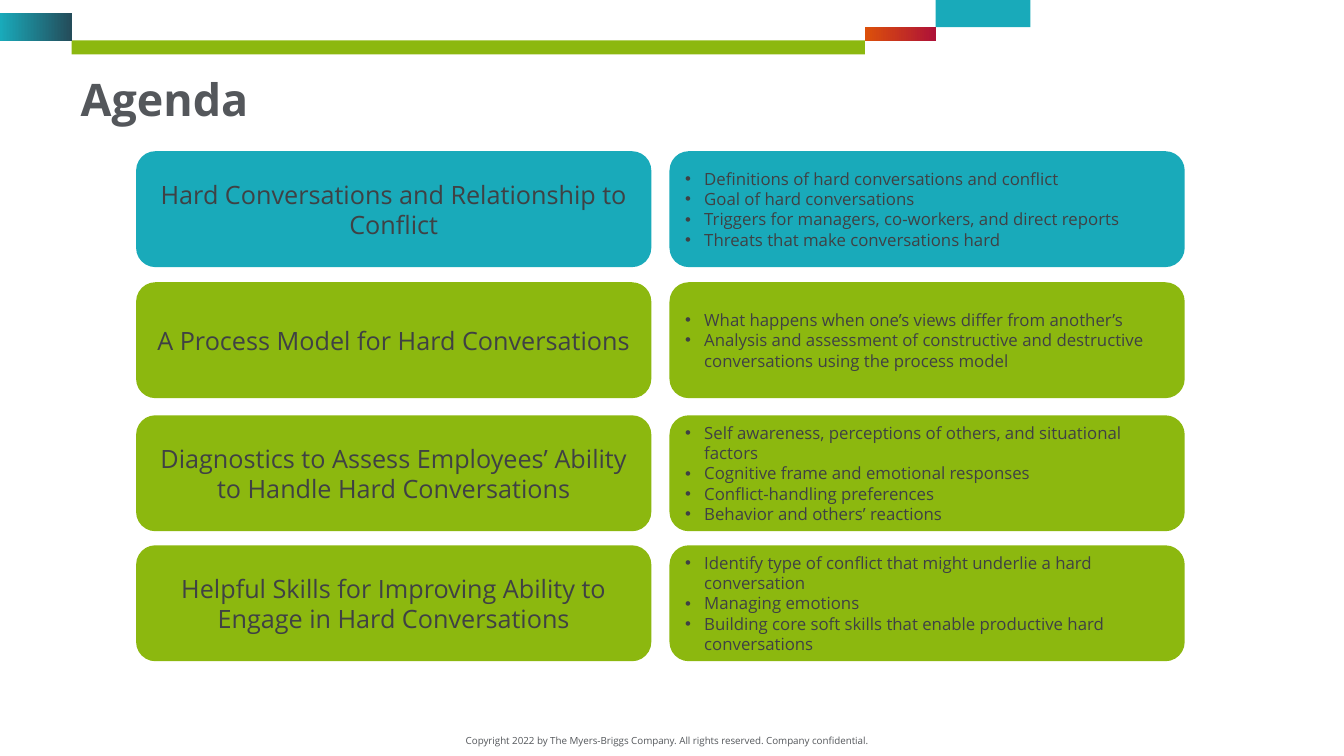
from lxml import etree
from pptx import Presentation
from pptx import util as u
from pptx.dml.color import RGBColor
from pptx.enum import shapes, text
from pptx.oxml.ns import qn

PX = 9144  # EMU, a hundredth of an inch
TEAL, GREEN, GREY, INK = "19AABA", "8CB80F", "54575B", "3F4144"

AGENDA = [
    (150, TEAL, "Hard Conversations and Relationship to Conflict", [
        "Definitions of hard conversations and conflict",
        "Goal of hard conversations",
        "Triggers for managers, co-workers, and direct reports",
        "Threats that make conversations hard"]),
    (280, GREEN, "A Process Model for Hard Conversations", [
        "What happens when one’s views differ from another’s",
        "Analysis and assessment of constructive and destructive "
        "conversations using the process model"]),
    (412, GREEN, "Diagnostics to Assess Employees’ Ability to Handle Hard Conversations", [
        "Self awareness, perceptions of others, and situational factors",
        "Cognitive frame and emotional responses",
        "Conflict-handling preferences",
        "Behavior and others’ reactions"]),
    (541, GREEN, "Helpful Skills for Improving Ability to Engage in Hard Conversations", [
        "Identify type of conflict that might underlie a hard conversation",
        "Managing emotions",
        "Building core soft skills that enable productive hard conversations"]),
]


def colour(value):
    return RGBColor.from_string(value)


class Page:
    font = "Open Sans"

    def __init__(self, deck):
        self.slide = deck.slides.add_slide(deck.slide_layouts[5])

    def style(self, para, size, ink, align=text.PP_ALIGN.LEFT, bold=False):
        para.alignment = align
        para.font.name = self.font
        para.font.size = u.Pt(size)
        para.font.bold = bold
        para.font.color.rgb = colour(ink)

    def title(self, words, left, top, width, height):
        box = self.slide.shapes.title
        box.left, box.top, box.width, box.height = (
            n * PX for n in (left, top, width, height))
        frame = box.text_frame
        frame.text = words
        frame.vertical_anchor = text.MSO_ANCHOR.TOP
        frame.auto_size = text.MSO_AUTO_SIZE.NONE
        para = frame.paragraphs[0]
        para.line_spacing = 0.9
        self.style(para, 32, GREY, bold=True)

    def block(self, kind, fills, *place):
        """Draw a borderless shape; two fills make a left-to-right gradient."""
        box = self.slide.shapes.add_shape(kind, *(n * PX for n in place))
        box.shadow.inherit = False
        box.line.fill.background()
        if len(fills) == 1:
            box.fill.solid()
            box.fill.fore_color.rgb = colour(fills[0])
        else:
            box.fill.gradient()
            box.fill.gradient_angle = 0
            for stop, fill in zip(box.fill.gradient_stops, fills):
                stop.color.rgb = colour(fill)
        return box

    def bar(self, fills, *place):
        self.block(shapes.MSO_SHAPE.RECTANGLE, fills, *place)

    def card(self, fill, lines, size, bulleted, *place):
        box = self.block(shapes.MSO_SHAPE.ROUNDED_RECTANGLE, [fill], *place)
        frame = box.text_frame
        frame.word_wrap = True
        frame.vertical_anchor = text.MSO_ANCHOR.MIDDLE
        frame.text = "\n".join(lines)
        for para in frame.paragraphs:
            if bulleted:
                self.bullet(para)
            align = text.PP_ALIGN.LEFT if bulleted else text.PP_ALIGN.CENTER
            self.style(para, size, INK, align)

    def bullet(self, para, indent=19):
        props = para._p.get_or_add_pPr()
        props.set("marL", str(indent * PX))
        props.set("indent", str(-indent * PX))
        etree.SubElement(props, qn("a:buFont")).set("typeface", "Arial")
        etree.SubElement(props, qn("a:buChar")).set("char", "•")

    def footer(self, words, *place):
        box = self.slide.shapes.add_textbox(*(n * PX for n in place))
        frame = box.text_frame
        frame.word_wrap = True
        frame.text = words
        self.style(frame.paragraphs[0], 7, GREY, text.PP_ALIGN.CENTER)


def main():
    deck = Presentation()
    deck.slide_width, deck.slide_height = u.Inches(13.33), u.Inches(7.5)
    page = Page(deck)

    page.bar([GREEN], 71, 40, 787, 14)
    page.bar([TEAL, "244C5A"], 0, 13, 71, 28)
    page.bar([TEAL], 928, -1, 94, 28)
    page.bar(["DC500A", "AE1237"], 858, 27, 70, 14)
    page.footer("Copyright 2022 by The Myers-Briggs Company. All rights reserved. "
                "Company confidential.", 446, 724, 431, 22)

    page.title("Agenda", 70, 72, 1130, 99)
    for top, fill, topic, points in AGENDA:
        page.card(fill, [topic], 18, False, 135, top, 511, 115)
        page.card(fill, points, 12, True, 664, top, 511, 115)

    deck.save("out.pptx")


if __name__ == "__main__":
    main()
